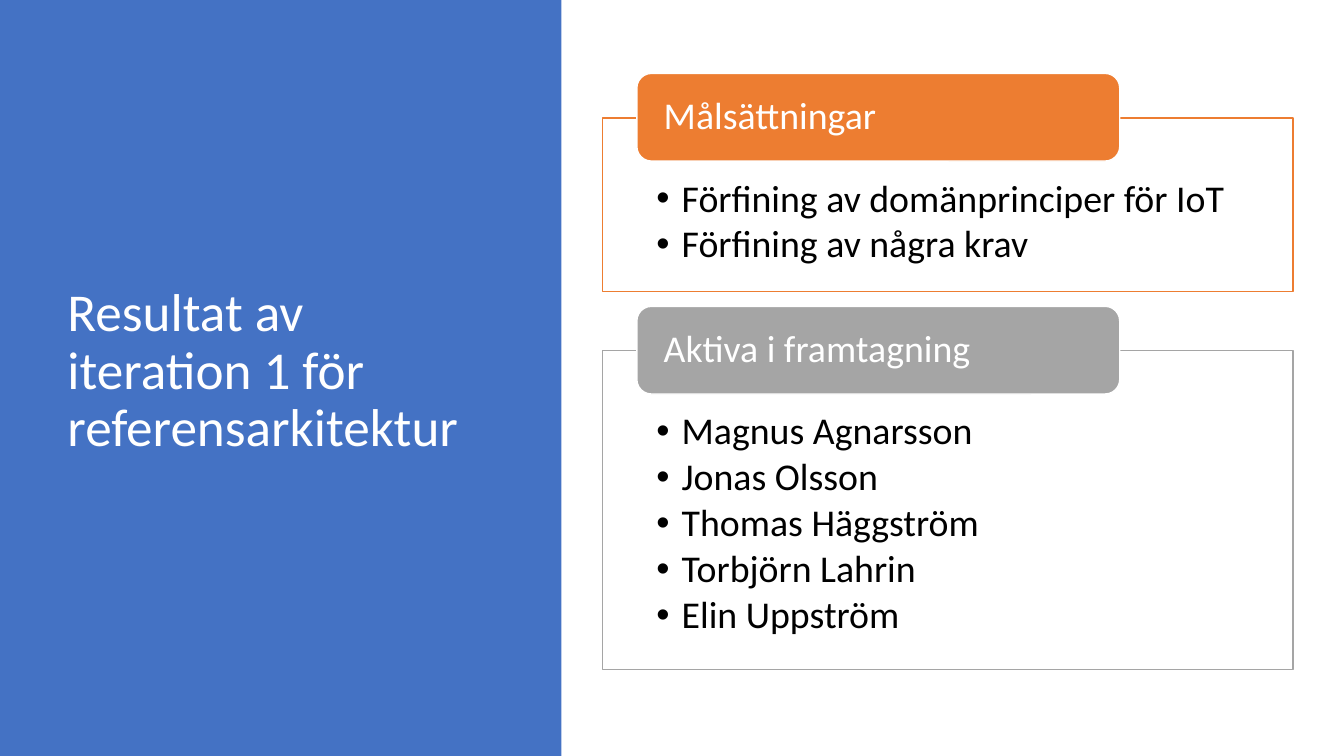
from lxml import etree
from pptx import Presentation
from pptx.dml.color import RGBColor
from pptx.enum.shapes import MSO_SHAPE
from pptx.enum.text import MSO_ANCHOR, PP_ALIGN
from pptx.oxml.ns import qn
from pptx.util import Cm, Pt

RECTANGLE = MSO_SHAPE.RECTANGLE
ROUNDED = MSO_SHAPE.ROUNDED_RECTANGLE
TOP, MIDDLE = MSO_ANCHOR.TOP, MSO_ANCHOR.MIDDLE
LEFT = PP_ALIGN.LEFT

COLOURS = {
    "blue": "4472C4",
    "orange": "ED7D31",
    "grey": "A5A5A5",
    "white": "FFFFFF",
    "black": "000000",
}

SECTIONS = [
    ("Målsättningar", "orange", 2.97, 4.37,
     ["Förfining av domänprinciper för IoT", "Förfining av några krav"]),
    ("Aktiva i framtagning", "grey", 8.84, 8.03,
     ["Magnus Agnarsson", "Jonas Olsson", "Thomas Häggström",
      "Torbjörn Lahrin", "Elin Uppström"]),
]


class SlideBuilder:
    font = "Calibri"
    title_size = 38
    body_size = 27

    def __init__(self, slide):
        self.slide = slide

    def colour(self, name):
        return RGBColor.from_string(COLOURS[name])

    def box(self, kind, place, fill, line=None):
        shape = self.slide.shapes.add_shape(kind, *map(Cm, place))
        shape.shadow.inherit = False
        shape.fill.solid()
        shape.fill.fore_color.rgb = self.colour(fill)
        if line:
            shape.line.color.rgb = self.colour(line)
            shape.line.width = Pt(1)
        else:
            shape.line.fill.background()
        return shape

    def text(self, shape, lines, size, colour, insets, anchor=MIDDLE,
             space_after=0, bullets=False):
        frame = shape.text_frame
        frame.word_wrap = True
        frame.vertical_anchor = anchor
        (frame.margin_left, frame.margin_top,
         frame.margin_right, frame.margin_bottom) = map(Cm, insets)
        for index, line in enumerate(lines):
            paragraph = frame.add_paragraph() if index else frame.paragraphs[0]
            paragraph.alignment = LEFT
            paragraph.line_spacing = 0.9
            paragraph.space_after = Pt(space_after)
            if bullets:
                self.bullet(paragraph)
            run = paragraph.add_run()
            run.text = line
            run.font.name = self.font
            run.font.size = Pt(size)
            run.font.color.rgb = self.colour(colour)

    def bullet(self, paragraph):
        paragraph.level = 1
        properties = paragraph._p.get_or_add_pPr()
        properties.set("marL", str(Cm(0.64)))
        properties.set("indent", str(-Cm(0.64)))
        etree.SubElement(properties, qn("a:buFont"), typeface="Arial")
        etree.SubElement(properties, qn("a:buChar"), char="•")

    def title(self, wording, place):
        shape = self.slide.shapes.add_textbox(*map(Cm, place))
        self.text(shape, [wording], self.title_size, "white",
                  (0.25, 0.13, 0.25, 0.13))

    def section(self, heading, colour, top, height, items):
        panel = self.box(RECTANGLE, (15.19, top, 17.4, height), "white", colour)
        self.text(panel, items, self.body_size, "black",
                  (1.35, 1.55, 1.35, 0.53), TOP, 3.6, True)
        label = self.box(ROUNDED, (16.05, top - 1.12, 12.17, 2.21),
                         colour, "white")
        self.text(label, [heading], self.body_size, "white", (0.57, 0, 0.57, 0))


def main():
    presentation = Presentation()
    presentation.slide_width = Cm(33.87)
    presentation.slide_height = Cm(19.05)
    slide = presentation.slides.add_slide(presentation.slide_layouts[6])
    builder = SlideBuilder(slide)
    builder.box(RECTANGLE, (0, 0, 14.15, 19.05), "blue")
    builder.title("Resultat av iteration 1 för referensarkitektur",
                  (1.45, 1.73, 10.57, 15.29))
    for section in SECTIONS:
        builder.section(*section)
    presentation.save("out.pptx")


if __name__ == "__main__":
    main()
